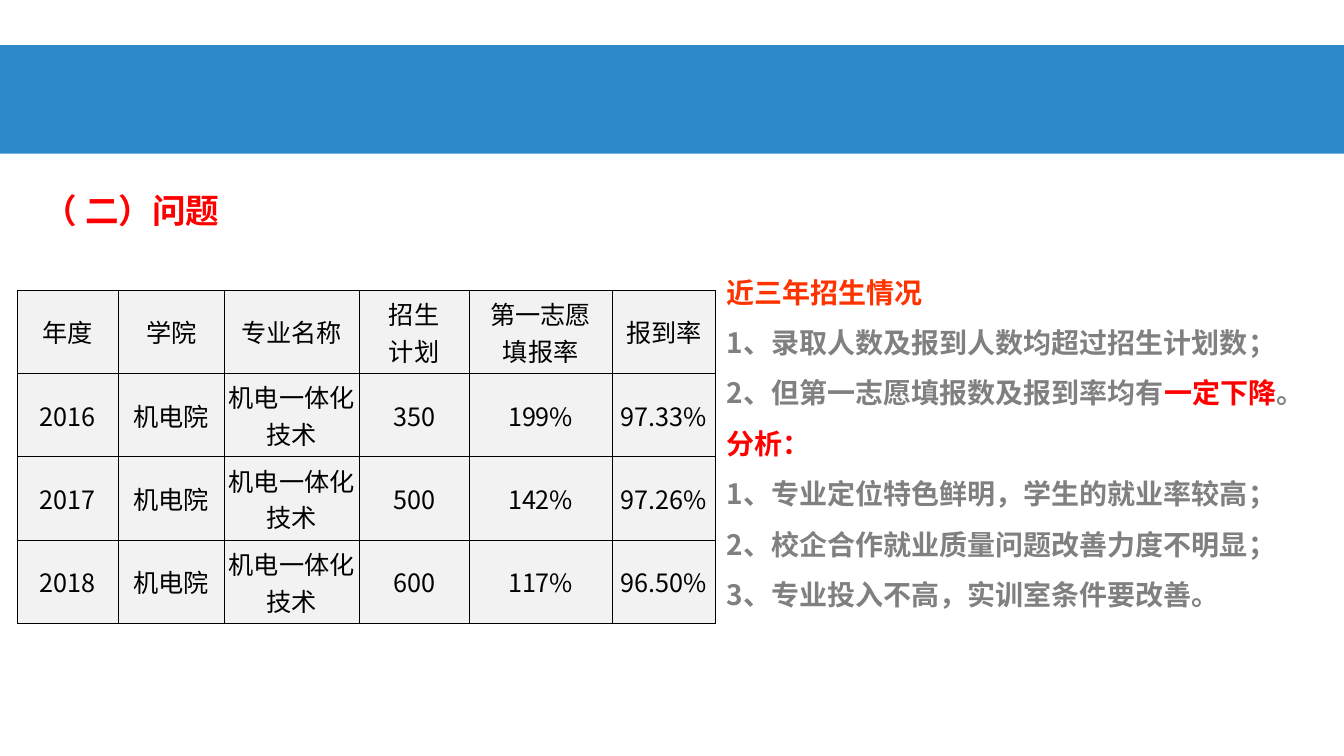
from lxml import etree
from pptx import Presentation
from pptx.dml.color import RGBColor
from pptx.enum import shapes, text
from pptx.oxml import ns
from pptx.util import Cm, Pt

FONT = "Noto Sans CJK SC"
BLUE = RGBColor(0x00, 0x70, 0xC0)
RED = RGBColor(0xFF, 0x00, 0x00)
ORANGE = RGBColor(0xFF, 0x33, 0x00)
GRAY = RGBColor(0x80, 0x80, 0x80)
BLACK = RGBColor(0x00, 0x00, 0x00)
PALE = RGBColor(0xF2, 0xF2, 0xF2)

TITLE = "（ 二）问题"
FINDINGS = [
    [("近三年招生情况", ORANGE)],
    [("1、录取人数及报到人数均超过招生计划数；", GRAY)],
    [("2、但第一志愿填报数及报到率均有", GRAY), ("一定下降", RED), ("。", GRAY)],
    [("分析：", RED)],
    [("1、专业定位特色鲜明，学生的就业率较高；", GRAY)],
    [("2、校企合作就业质量问题改善力度不明显；", GRAY)],
    [("3、专业投入不高，实训室条件要改善。", GRAY)],
]
COLLEGE, MAJOR = "机电院", "机电一体化技术"
ENROLMENT = [
    ("年度", "学院", "专业名称", "招生\n计划", "第一志愿\n填报率", "报到率"),
    ("2016", COLLEGE, MAJOR, "350", "199%", "97.33%"),
    ("2017", COLLEGE, MAJOR, "500", "142%", "97.26%"),
    ("2018", COLLEGE, MAJOR, "600", "117%", "96.50%"),
]
COLUMN_WIDTHS = (2.54, 2.67, 3.4, 2.77, 3.61, 2.6)
ROW_HEIGHT = 2.1


def add_text(paragraph, words, size=18, color=BLACK, bold=False):
    """Append a formatted run to a paragraph."""
    run = paragraph.add_run()
    run.text = words
    run.font.name = FONT
    run.font.size = Pt(size)
    run.font.bold = bold
    run.font.color.rgb = color
    etree.SubElement(run.font._element, ns.qn("a:ea"), typeface=FONT)


def place(shape, left, top, width, height):
    """Move and size a shape, in centimetres."""
    shape.left, shape.top = Cm(left), Cm(top)
    shape.width, shape.height = Cm(width), Cm(height)


def add_band(slide, width):
    """Draw the translucent band across the slide."""
    band = slide.shapes.add_shape(shapes.MSO_SHAPE.RECTANGLE, 0, Cm(1.14), width, Cm(2.73))
    band.shadow.inherit = False
    band.fill.solid()
    band.fill.fore_color.rgb = BLUE
    band.line.fill.background()
    color = band._element.spPr.find(".//" + ns.qn("a:srgbClr"))
    etree.SubElement(color, ns.qn("a:alpha"), val="82000")


def fill_title(title):
    """Write the section heading."""
    place(title, 0.85, 4.65, 5.31, 1.3)
    frame = title.text_frame
    frame.word_wrap = True
    frame.auto_size = text.MSO_AUTO_SIZE.NONE
    frame.vertical_anchor = text.MSO_ANCHOR.MIDDLE
    paragraph = frame.paragraphs[0]
    paragraph.alignment = text.PP_ALIGN.LEFT
    add_text(paragraph, TITLE, size=24, color=RED, bold=True)


def fill_findings(body):
    """Write the findings with hanging indents."""
    place(body, 18.06, 6.38, 15.8, 9.25)
    frame = body.text_frame
    frame.word_wrap = True
    frame.auto_size = text.MSO_AUTO_SIZE.NONE
    for index, pieces in enumerate(FINDINGS):
        paragraph = frame.add_paragraph() if index else frame.paragraphs[0]
        hang = Cm(0.95) if index else 0
        properties = paragraph._p.get_or_add_pPr()
        properties.set("marL", str(hang))
        properties.set("indent", str(-hang))
        etree.SubElement(properties, ns.qn("a:buNone"))
        paragraph.line_spacing = 1.5
        paragraph.space_before = Pt(0)
        for words, color in pieces:
            add_text(paragraph, words, size=20, color=color, bold=True)


def add_borders(cell):
    """Give a cell thin black borders, placed before its fill."""
    properties = cell._tc.get_or_add_tcPr()
    for position, side in enumerate(("lnL", "lnR", "lnT", "lnB")):
        line = etree.Element(ns.qn("a:" + side), w=str(Pt(0.5)))
        fill = etree.SubElement(line, ns.qn("a:solidFill"))
        etree.SubElement(fill, ns.qn("a:srgbClr"), val=str(BLACK))
        properties.insert(position, line)


def add_enrolment(slide):
    """Build the enrolment table."""
    frame = slide.shapes.add_table(
        len(ENROLMENT), len(COLUMN_WIDTHS), Cm(0.44), Cm(7.31),
        Cm(sum(COLUMN_WIDTHS)), Cm(ROW_HEIGHT * len(ENROLMENT)))
    table = frame.table
    for column, width in zip(table.columns, COLUMN_WIDTHS):
        column.width = Cm(width)
    for row, values in zip(table.rows, ENROLMENT):
        row.height = Cm(ROW_HEIGHT)
        for cell, value in zip(row.cells, values):
            cell.fill.solid()
            cell.fill.fore_color.rgb = PALE
            add_borders(cell)
            side = 0.18 if value.endswith("%") else 0.03
            cell.margin_left = cell.margin_right = Cm(side)
            cell.margin_top = cell.margin_bottom = 0
            cell.vertical_anchor = text.MSO_ANCHOR.MIDDLE
            for index, words in enumerate(value.split("\n")):
                lines = cell.text_frame
                paragraph = lines.add_paragraph() if index else lines.paragraphs[0]
                paragraph.alignment = text.PP_ALIGN.CENTER
                add_text(paragraph, words)


def main():
    """Build and save the slide."""
    presentation = Presentation()
    presentation.slide_width, presentation.slide_height = Cm(33.87), Cm(19.05)
    slide = presentation.slides.add_slide(presentation.slide_layouts[1])
    add_band(slide, presentation.slide_width)
    fill_title(slide.shapes.title)
    fill_findings(slide.placeholders[1])
    add_enrolment(slide)
    presentation.save("out.pptx")


if __name__ == "__main__":
    main()
